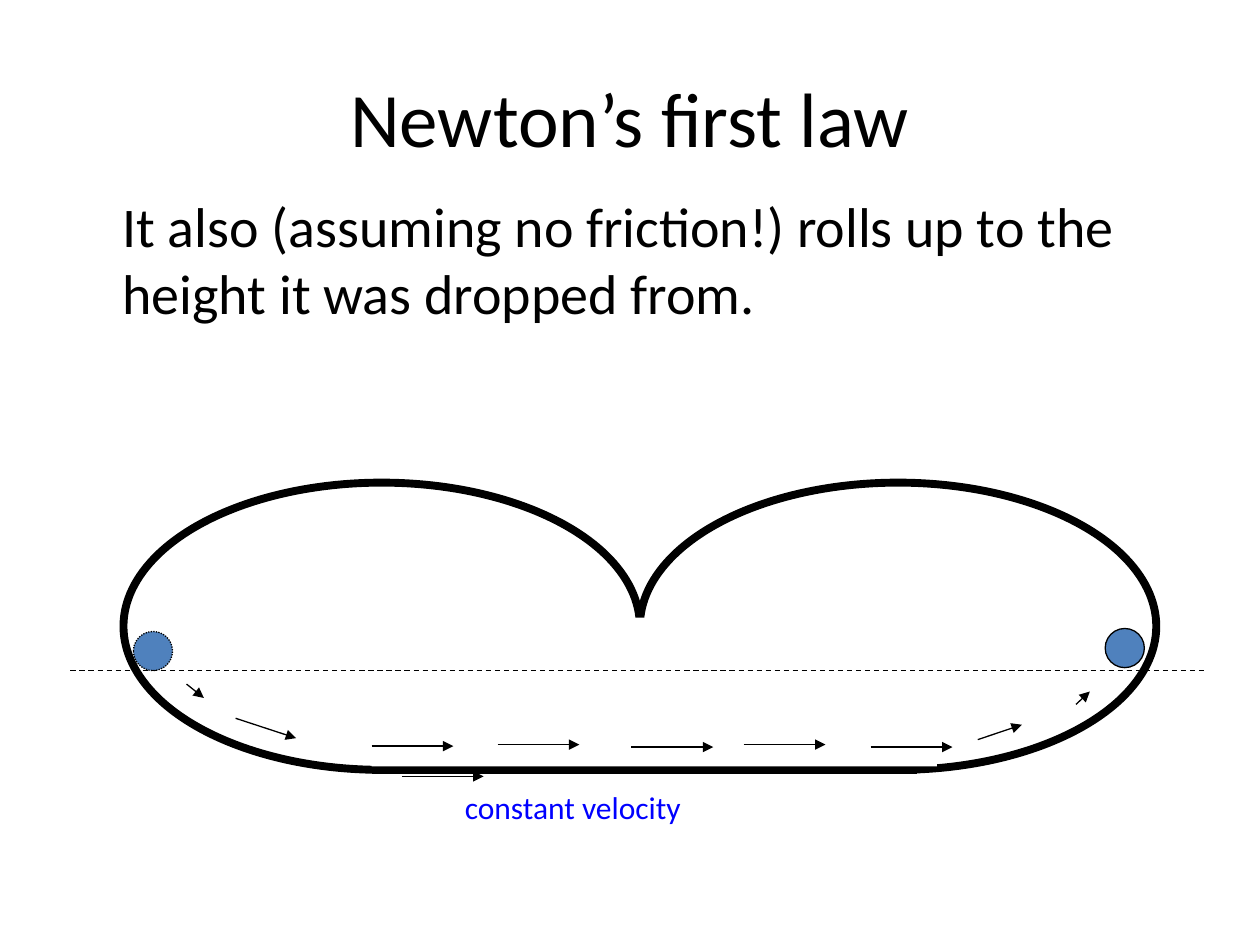
from lxml.etree import SubElement
from pptx import Presentation
from pptx.dml.color import RGBColor
from pptx.enum.dml import MSO_LINE
from pptx.enum.shapes import MSO_CONNECTOR, MSO_SHAPE
from pptx.enum.text import MSO_ANCHOR, PP_ALIGN
from pptx.oxml.ns import qn
from pptx.util import Cm, Pt

colours = {
    name: RGBColor.from_string(value)
    for name, value in {
        "ink": "000000",
        "ball": "4F81BD",
        "label": "0000FF",
        "paper": "FFFFFF",
    }.items()
}

deck = Presentation()
deck.slide_width, deck.slide_height = Cm(25.4), Cm(19.05)
slide = deck.slides.add_slide(deck.slide_layouts[6])


def add_solid(kind, place, fill, weight, dash=None):
    solid = slide.shapes.add_shape(kind, *map(Cm, place))
    solid.shadow.inherit = False
    if fill:
        solid.fill.solid()
        solid.fill.fore_color.rgb = colours[fill]
    else:
        solid.fill.background()
    if weight:
        solid.line.color.rgb = colours["ink"]
        solid.line.width = Pt(weight)
        solid.line.dash_style = dash
    else:
        solid.line.fill.background()


def add_line(ends, weight=0.75, dash=None, arrow=False):
    line = slide.shapes.add_connector(MSO_CONNECTOR.STRAIGHT, *map(Cm, ends))
    line.line.color.rgb = colours["ink"]
    line.line.width = Pt(weight)
    line.line.dash_style = dash
    if arrow:
        SubElement(line.line._get_or_add_ln(), qn("a:tailEnd"), type="triangle")
    SubElement(line._element.spPr, qn("a:effectLst"))


loop_width, loop_height, loop_top = 10.41, 5.79, 9.73
left_loop = 2.49
right_loop = left_loop + loop_width
ball_size = 0.79

add_solid(MSO_SHAPE.OVAL, (right_loop, loop_top, loop_width, loop_height), None, 4.5)
add_solid(MSO_SHAPE.OVAL, (left_loop, loop_top, loop_width, loop_height), None, 4.5)
add_solid(MSO_SHAPE.OVAL, (2.69, 12.73, ball_size, ball_size), "ball", 0.75, MSO_LINE.ROUND_DOT)
add_line((7.49, 15.52, 18.49, 15.52), 4.5)
add_solid(MSO_SHAPE.RECTANGLE, (7.49, 12.45, 11.4, 3), "paper", 0)
add_solid(MSO_SHAPE.OVAL, (22.28, 12.67, ball_size, ball_size), "ball", 0.75)

downhill = [(3.76, 13.79, 4.11, 14.07), (4.75, 14.48, 5.97, 14.88)]
level_starts = [
    (7.49, 15.04), (8.1, 15.65), (10.03, 15.01),
    (12.73, 15.06), (14.99, 15.01), (17.55, 15.06),
]
level = [(left, top, left + 1.65, top) for left, top in level_starts]
uphill = [(19.71, 14.91, 20.6, 14.61), (21.69, 14.2, 21.97, 13.94)]
for ends in downhill + level + uphill:
    add_line(ends, arrow=True)
add_line((1.42, 13.51, 24.31, 13.51), dash=MSO_LINE.DASH)

texts = [
    ("Newton’s first law", (1.27, 0.76, 22.86, 3.18), 0,
     {"size": Pt(44)}, "ink", PP_ALIGN.CENTER, MSO_ANCHOR.MIDDLE),
    ("It also (assuming no friction!) rolls up to the height it was dropped from.",
     (1.27, 3.73, 23.62, 13.28), 0.95,
     {"size": Pt(32)}, "ink", PP_ALIGN.LEFT, MSO_ANCHOR.TOP),
    ("constant velocity", (9.12, 15.77, 8.43, 1.02), 0,
     {"size": Pt(18)}, "label", PP_ALIGN.LEFT, MSO_ANCHOR.TOP),
]
for wording, place, indent, font_format, colour, alignment, anchor in texts:
    box = slide.shapes.add_textbox(*map(Cm, place))
    box.text_frame.word_wrap = True
    box.text_frame.vertical_anchor = anchor
    para = box.text_frame.paragraphs[0]
    para.alignment = alignment
    para._p.get_or_add_pPr().set("marL", str(Cm(indent)))
    span = para.add_run()
    span.text = wording
    for attribute, value in {"name": "Calibri", **font_format}.items():
        setattr(span.font, attribute, value)
    span.font.color.rgb = colours[colour]

deck.save("out.pptx")
